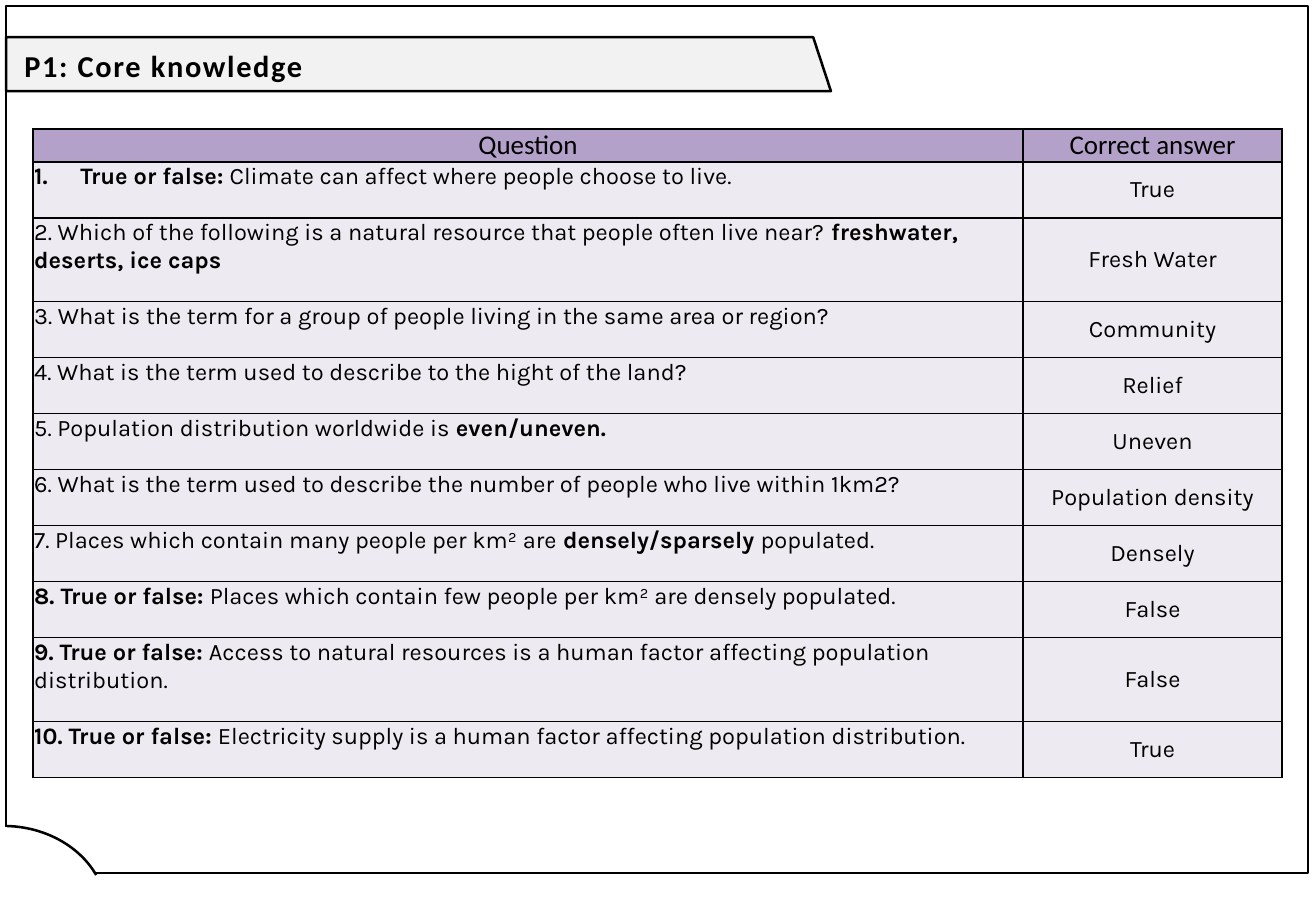
"""Build the core knowledge question and answer slide."""
import pptx
import pptx.util
import pptx.dml.color
import pptx.enum.shapes
import pptx.enum.text
import pptx.oxml.ns
import lxml.etree

Pt = pptx.util.Pt
ANCHOR = pptx.enum.text.MSO_ANCHOR
ALIGN = pptx.enum.text.PP_ALIGN
SHAPE = pptx.enum.shapes.MSO_SHAPE

COLOURS = {"ink": "000000", "paper": "FFFFFF", "banner": "F2F2F2", "header": "B4A1CA", "body": "EDEAF1"}
TITLE = "P1: Core knowledge"
HEADERS = ("Question", "Correct answer")
# Each question is a list of (text, bold) runs.
QUESTIONS = [
    ([("True or false: ", True), ("Climate can affect where people choose to live.", False)], "True"),
    ([("2. Which of the following is a natural resource that people often live near? ", False),
      ("freshwater, deserts, ice caps", True)], "Fresh Water"),
    ([("3. What is the term for a group of people living in the same area or region?", False)], "Community"),
    ([("4. What is the term used to describe to the hight of the land?", False)], "Relief"),
    ([("5. Population distribution worldwide is ", False), ("even/uneven.", True)], "Uneven"),
    ([("6. What is the term used to describe the number of people who live within 1km2?", False)],
     "Population density"),
    ([("7. Places which contain many people per km² are ", False), ("densely/sparsely ", True),
      ("populated.", False)], "Densely"),
    ([("8. True or false: ", True),
      ("Places which contain few people per km² are densely populated.", False)], "False"),
    ([("9. True or false: ", True),
      ("Access to natural resources is a human factor affecting population distribution.", False)], "False"),
    ([("10. True or false: ", True),
      ("Electricity supply is a human factor affecting population distribution.", False)], "True"),
]
TWO_LINE_QUESTIONS = (2, 9)
HEADER_HEIGHT, ROW_HEIGHT, EXTRA_LINE = 19.6, 33.2, 16.5
COLUMN_WIDTHS = (586.8, 153.6)
TABLE_LEFT, TABLE_TOP = 19.6, 76.4
NUMBER_INDENT = 27.4
BANNER_POINTS = [(3.6, 22), (482, 22), (492.5, 54), (3.6, 54)]


def colour(name):
    return pptx.dml.color.RGBColor.from_string(COLOURS[name])


def style_shape(shape, fill=None, outlined=True):
    shape.shadow.inherit = False
    if fill:
        shape.fill.solid()
        shape.fill.fore_color.rgb = colour(fill)
    else:
        shape.fill.background()
    if outlined:
        shape.line.color.rgb = colour("ink")
        shape.line.width = Pt(1.5)
    else:
        shape.line.fill.background()


def add_shape(slide, kind, box, **style):
    shape = slide.shapes.add_shape(kind, *map(Pt, box))
    style_shape(shape, **style)
    return shape


def style_run(run, font_name, size, bold=False):
    run.font.name = font_name
    run.font.size = Pt(size)
    run.font.bold = bold
    run.font.color.rgb = colour("ink")


def add_child(parent, tag, **attributes):
    return lxml.etree.SubElement(parent, pptx.oxml.ns.qn(tag), attributes)


def fill_cell(cell, runs, font_name, size, fill, inset=0, anchor=ANCHOR.MIDDLE, align=ALIGN.CENTER):
    properties = cell._tc.get_or_add_tcPr()
    for side in "LRTB":
        border = add_child(properties, f"a:ln{side}", w=str(Pt(1)))
        add_child(add_child(border, "a:solidFill"), "a:srgbClr", val=COLOURS["ink"])
    cell.fill.solid()
    cell.fill.fore_color.rgb = colour(fill)
    cell.margin_left = cell.margin_top = cell.margin_right = Pt(inset)
    cell.margin_bottom = 0
    cell.vertical_anchor = anchor
    paragraph = cell.text_frame.paragraphs[0]
    paragraph.alignment = align
    for text, bold in runs:
        run = paragraph.add_run()
        run.text = text
        style_run(run, font_name, size, bold)


def number_paragraph(paragraph):
    properties = paragraph._p.get_or_add_pPr()
    properties.set("marL", str(Pt(NUMBER_INDENT)))
    properties.set("indent", str(-Pt(NUMBER_INDENT)))
    add_child(properties, "a:buFont", typeface="+mj-lt")
    add_child(properties, "a:buAutoNum", type="arabicPeriod")


def add_background(slide):
    start, *others = [(Pt(x), Pt(y)) for x, y in BANNER_POINTS]
    builder = slide.shapes.build_freeform(*start)
    builder.add_line_segments(others, close=True)
    style_shape(builder.convert_to_shape(), fill="banner")
    add_shape(slide, SHAPE.RECTANGLE, (3.6, 3.6, 771.8, 514))
    corner = add_shape(slide, SHAPE.ARC, (-59, 489.6, 122.4, 104.4), fill="paper")
    corner.adjustments[0], corner.adjustments[1] = 162.53, 202.27
    add_shape(slide, SHAPE.RECTANGLE, (0.7, 490.3, 3.6, 7.2), fill="paper", outlined=False)


def add_questions(slide):
    heights = [HEADER_HEIGHT] + [
        ROW_HEIGHT + EXTRA_LINE * (number in TWO_LINE_QUESTIONS) for number in range(1, len(QUESTIONS) + 1)]
    box = (TABLE_LEFT, TABLE_TOP, sum(COLUMN_WIDTHS), sum(heights))
    table = slide.shapes.add_table(len(heights), len(COLUMN_WIDTHS), *map(Pt, box)).table
    for column, width in zip(table.columns, COLUMN_WIDTHS):
        column.width = Pt(width)
    for row, height in zip(table.rows, heights):
        row.height = Pt(height)
    for index, header in enumerate(HEADERS):
        fill_cell(table.cell(0, index), [(header, False)], "Calibri", 16, "header")
    for number, (question, answer) in enumerate(QUESTIONS, 1):
        fill_cell(table.cell(number, 0), question, "Karla", 14, "body",
                  inset=0.7, anchor=ANCHOR.TOP, align=ALIGN.LEFT)
        fill_cell(table.cell(number, 1), [(answer, False)], "Karla", 14, "body")
    number_paragraph(table.cell(1, 0).text_frame.paragraphs[0])


def add_title(slide):
    title = slide.shapes.title
    title.left, title.top, title.width, title.height = map(Pt, (7.2, 15.1, 463, 45.4))
    frame = title.text_frame
    frame.text = TITLE
    frame.word_wrap = True
    frame.auto_size = pptx.enum.text.MSO_AUTO_SIZE.NONE
    frame.vertical_anchor = ANCHOR.MIDDLE
    paragraph = frame.paragraphs[0]
    paragraph.alignment = ALIGN.LEFT
    paragraph.line_spacing = 1.07
    paragraph.space_before = Pt(0)
    paragraph.space_after = Pt(8)
    run = paragraph.runs[0]
    style_run(run, "Calibri", 18, bold=True)
    run.font._element.set("spc", "100")
    title._element.getparent().append(title._element)


def main():
    presentation = pptx.Presentation()
    presentation.slide_width, presentation.slide_height = Pt(780), Pt(540)
    slide = presentation.slides.add_slide(presentation.slide_layouts[5])
    add_background(slide)
    add_questions(slide)
    add_title(slide)
    presentation.save("out.pptx")


if __name__ == "__main__":
    main()
